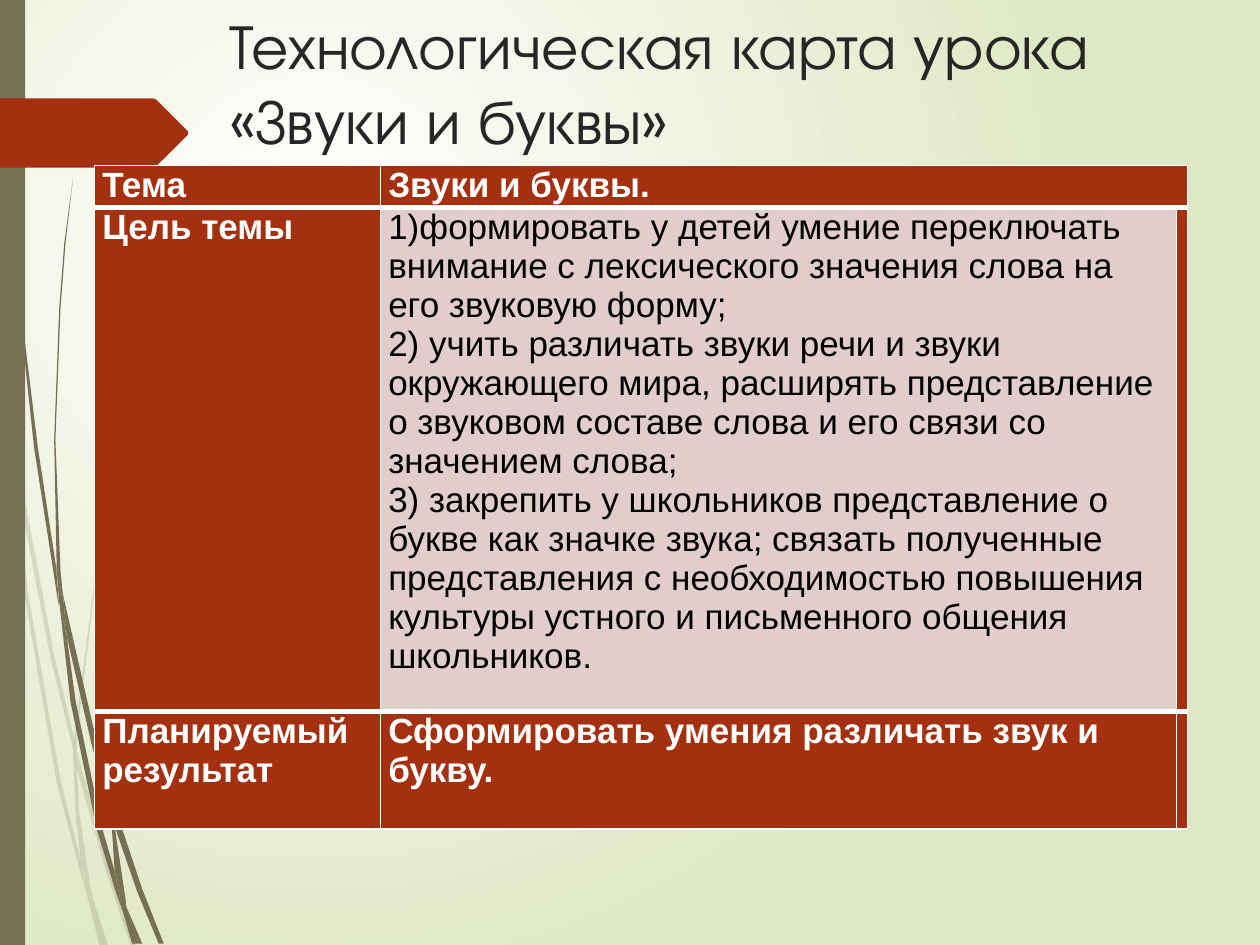
"""Build the lesson plan slide "Звуки и буквы" with its table and grass ornament."""

from dataclasses import dataclass

from lxml import etree
from pptx import Presentation
from pptx.dml.color import RGBColor
from pptx.enum.shapes import MSO_SHAPE
from pptx.oxml import parse_xml
from pptx.oxml.ns import nsdecls, qn
from pptx.util import Pt

RECTANGLE = MSO_SHAPE.RECTANGLE
COLORS = {
    "olive": "766F54",
    "rust": "A53010",
    "pink": "E1CDCC",
    "white": "FFFFFF",
    "lime": "DFE8C4",
    "black": "000000",
    "heading": "262626",
}
GRID_UNIT = Pt(0.72)
TABLE_LEFT, TABLE_TOP = 54, 94.5
COLUMN_WIDTHS = (163.4, 455, 6.2)
THIN, THICK = 1, 3

Outline = tuple[tuple[float, float], ...]


@dataclass(frozen=True)
class Spray:
    opacity: int
    wisps: tuple[Outline, ...]


@dataclass(frozen=True)
class LessonRow:
    heading: str
    details: tuple[str, ...]
    height: float
    fill: str = "rust"
    color: str = "white"
    bold: bool = True
    spans: bool = False


PALE_SPRAY = Spray(20, (
    ((8, 350), (6, 322), (0, 282), (0, 299), (7, 344)),
    ((40, 522), (59, 599), (59, 586), (43, 520), (10, 345), (12, 376)),
    ((64, 607), (61, 596), (61, 610), (85, 694), (104, 751), (108, 751), (88, 692)),
    ((83, 751), (86, 751), (73, 711)),
    ((64, 683), (48, 619), (22, 469), (12, 376), (8, 350), (19, 470), (45, 621),
     (64, 693), (70, 714), (69, 707)),
    ((58, 599), (60, 646), (64, 683), (67, 692), (73, 711), (72, 706), (63, 646),
     (61, 610), (61, 608)),
    ((61, 584), (76, 462), (111, 349), (159, 245), (187, 198), (201, 175), (217, 154),
     (217, 153), (201, 175), (186, 197), (158, 244), (110, 348), (75, 461), (59, 584),
     (59, 586), (61, 596)),
    ((70, 714), (79, 751), (82, 751)),
    ((61, 608), (61, 610), (61, 596), (59, 586), (58, 599)),
    ((67, 692), (65, 683), (69, 707), (70, 714), (82, 751), (83, 751), (73, 711)),
))
DARK_SPRAY = Spray(100, (
    ((5, 110), (14, 233), (27, 355), (46, 477), (47, 481), (45, 457), (45, 453),
     (30, 355), (15, 232), (6, 109), (4, 48), (3, 0), (2, 0), (3, 48)),
    ((73, 592), (88, 645), (88, 633), (88, 631), (77, 590), (50, 472), (53, 505)),
    ((94, 649), (91, 641), (91, 656), (109, 708), (126, 749), (130, 749), (113, 706)),
    ((91, 691), (81, 657), (60, 556), (53, 505), (47, 477), (56, 557), (77, 659),
     (92, 708), (97, 722), (96, 717)),
    ((50, 472), (48, 453), (44, 349), (48, 245), (52, 193), (58, 141), (51, 193),
     (47, 245), (43, 349), (45, 449), (49, 472)),
    ((110, 749), (113, 749), (100, 719)),
    ((47, 477), (53, 505), (50, 472), (49, 472), (45, 449), (45, 453)),
    ((91, 633), (103, 552), (131, 476), (169, 406), (191, 374), (203, 359), (216, 344),
     (215, 344), (203, 358), (191, 373), (168, 405), (129, 474), (101, 551), (88, 631),
     (91, 641)),
    ((97, 722), (105, 749), (108, 749)),
    ((88, 645), (91, 691), (96, 706), (100, 719), (100, 716), (91, 656), (90, 651)),
    ((88, 645), (90, 651), (91, 656), (91, 641), (88, 631), (88, 633)),
    ((96, 706), (91, 691), (96, 717), (97, 722), (108, 749), (110, 749), (100, 719)),
))
ARROW: Outline = ((0, 78), (121, 78), (124, 79), (149, 104), (149, 107), (124, 132),
                  (121, 133), (0, 133))
LESSON_ROWS = (
    LessonRow("Тема", ("Звуки и буквы.",), 22.3, spans=True),
    LessonRow("Цель темы", (
        "1)формировать у детей умение переключать внимание с лексического значения слова на",
        "его звуковую форму;",
        "2) учить различать звуки речи и звуки окружающего мира, расширять представление "
        "о звуковом составе слова и его связи со значением слова;",
        "3) закрепить у школьников представление о букве как значке звука; связать "
        "полученные представления с необходимостью повышения культуры устного и "
        "письменного общения школьников.",
    ), 267.8, fill="pink", color="black", bold=False),
    LessonRow("Планируемый результат", ("Сформировать умения различать звук и букву.",), 67),
)


def rgb(name: str) -> RGBColor:
    """Return the palette colour of that name."""
    return RGBColor.from_string(COLORS[name])


def write(frame, paragraphs: tuple[str, ...], *, size: float = 20, font: str = "Arial",
          color: str = "white", bold: bool = False) -> None:
    """Fill a text frame with evenly formatted paragraphs."""
    frame.word_wrap = True
    for index, wording in enumerate(paragraphs):
        paragraph = frame.add_paragraph() if index else frame.paragraphs[0]
        run = paragraph.add_run()
        run.text = wording
        run.font.size, run.font.name, run.font.bold = Pt(size), font, bold
        run.font.color.rgb = rgb(color)


def paint(shape, color: str, opacity: int = 100) -> None:
    """Give a shape a flat fill without outline or shadow."""
    shape.shadow.inherit = False
    shape.fill.solid()
    shape.fill.fore_color.rgb = rgb(color)
    shape.line.fill.background()
    if opacity < 100:
        tint = shape.element.spPr.find(".//" + qn("a:srgbClr"))
        etree.SubElement(tint, qn("a:alpha"), val=str(opacity * 1000))


def draw_outline(shapes, outline: Outline, color: str, opacity: int = 100) -> None:
    """Draw a closed outline given in grid units."""
    builder = shapes.build_freeform(*outline[0], scale=GRID_UNIT)
    builder.add_line_segments(outline[1:], close=True)
    paint(builder.convert_to_shape(), color, opacity)


def set_background(slide) -> None:
    """Give the slide a radial gradient background."""
    slide.background.fill.solid()
    properties = slide.background.fill._xPr
    properties.replace(properties.find(qn("a:solidFill")), parse_xml(
        f'<a:gradFill {nsdecls("a")} rotWithShape="1"><a:gsLst>'
        f'<a:gs pos="0"><a:srgbClr val="{COLORS["white"]}"/></a:gs>'
        f'<a:gs pos="100000"><a:srgbClr val="{COLORS["lime"]}"/></a:gs></a:gsLst>'
        '<a:path path="circle"><a:fillToRect l="50000" t="50000" r="100000" b="100000"/>'
        '</a:path></a:gradFill>'))


def format_cell(cell, fill: str, top: float, bottom: float) -> None:
    """Set the borders, margins and fill of a table cell."""
    for side, width in (("L", THIN), ("R", THIN), ("T", top), ("B", bottom)):
        cell._tc.get_or_add_tcPr().append(parse_xml(
            f'<a:ln{side} {nsdecls("a")} w="{Pt(width)}"><a:solidFill>'
            f'<a:srgbClr val="{COLORS["white"]}"/></a:solidFill></a:ln{side}>'))
    cell.margin_left = cell.margin_right = Pt(4.5)
    cell.margin_top = cell.margin_bottom = Pt(0)
    cell.fill.solid()
    cell.fill.fore_color.rgb = rgb(fill)


def draw_table(slide) -> None:
    """Draw the lesson plan table."""
    table = slide.shapes.add_table(
        len(LESSON_ROWS), len(COLUMN_WIDTHS), Pt(TABLE_LEFT), Pt(TABLE_TOP),
        Pt(sum(COLUMN_WIDTHS)), Pt(sum(row.height for row in LESSON_ROWS))).table
    table.horz_banding = False
    for column, width in zip(table.columns, COLUMN_WIDTHS):
        column.width = Pt(width)
    last = len(LESSON_ROWS) - 1
    for index, row in enumerate(LESSON_ROWS):
        table.rows[index].height = Pt(row.height)
        heading, details, edge = (table.cell(index, column) for column in range(3))
        for cell, fill in ((heading, "rust"), (details, row.fill), (edge, "rust")):
            format_cell(cell, fill, THICK if index else THIN, THICK if index < last else THIN)
        edge.margin_left = edge.margin_right = Pt(0)
        write(heading.text_frame, (row.heading,), bold=True)
        write(details.text_frame, row.details, color=row.color, bold=row.bold)
        if row.spans:
            details.merge(edge)


def main() -> None:
    """Assemble and save the slide."""
    deck = Presentation()
    deck.slide_width, deck.slide_height = Pt(720), Pt(540)
    slide = deck.slides.add_slide(deck.slide_layouts[6])
    set_background(slide)
    for spray in (PALE_SPRAY, DARK_SPRAY):
        group = slide.shapes.add_group_shape()
        for wisp in spray.wisps:
            draw_outline(group.shapes, wisp, "olive", spray.opacity)
    paint(slide.shapes.add_shape(RECTANGLE, 0, 0, Pt(14.4), Pt(540)), "olive")
    draw_outline(slide.shapes, ARROW, "rust")
    title = slide.shapes.add_textbox(Pt(123.8), 0, Pt(519), Pt(94.3))
    write(title.text_frame, ("Технологическая карта урока «Звуки и буквы»",),
          size=36, font="TeX Gyre Adventor", color="heading")
    draw_table(slide)
    deck.save("out.pptx")


if __name__ == "__main__":
    main()
